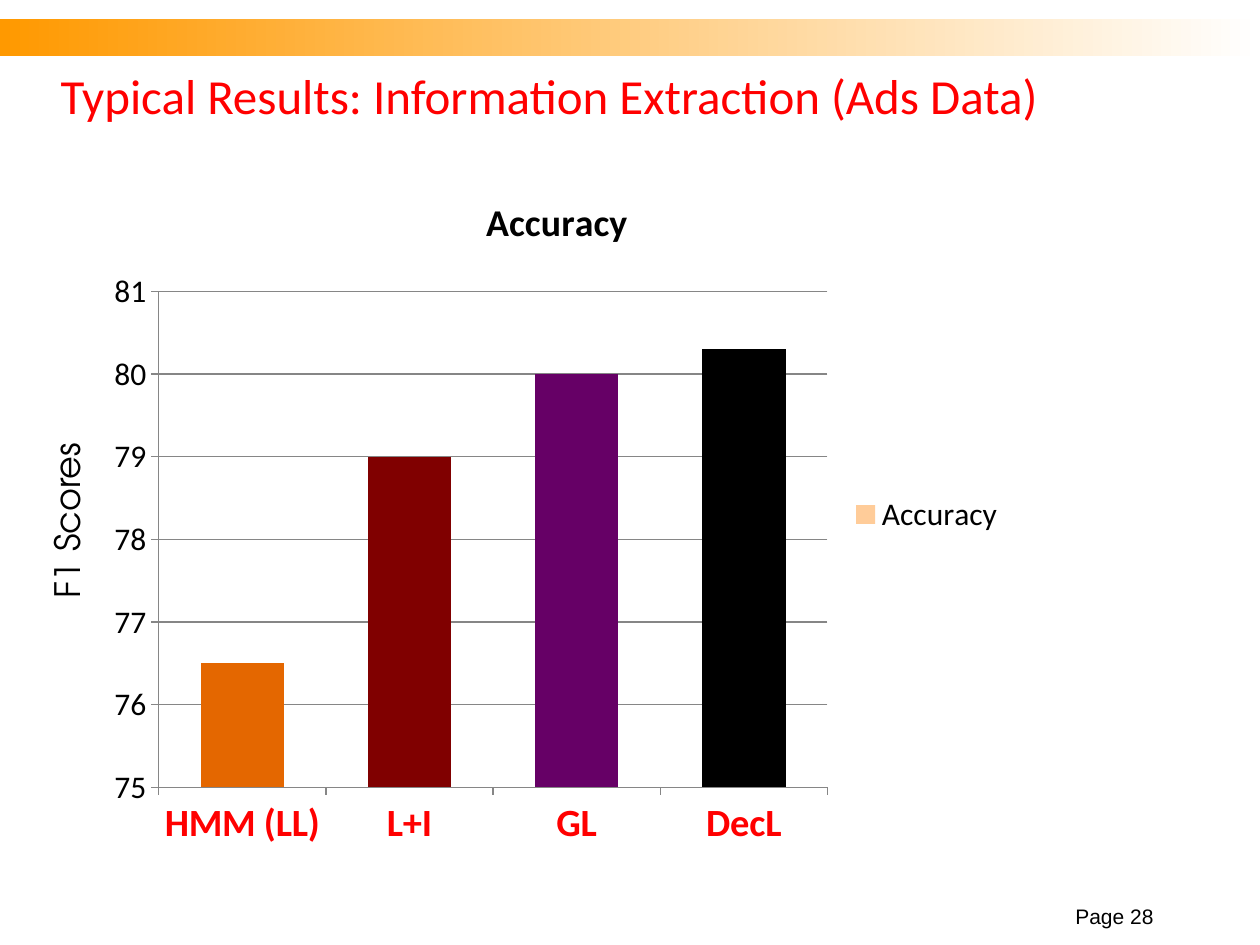
from pptx import Presentation
from pptx.chart.data import CategoryChartData
from pptx.dml.color import RGBColor
from pptx.enum.chart import XL_CHART_TYPE as ChartType, XL_LEGEND_POSITION as LegendPos
from pptx.enum.chart import XL_TICK_MARK as Tick
from pptx.enum.shapes import MSO_SHAPE as Shape
from pptx.enum.text import MSO_ANCHOR as Anchor, PP_ALIGN as Align
from pptx.util import Pt

COLORS = {"accent": "FF9900", "white": "FFFFFF", "red": "FF0000", "black": "000000",
          "grid": "868686", "series": "FFCC99", "orange": "E46700",
          "maroon": "800000", "purple": "660066"}
RESULTS = [("HMM (LL)", 76.5, "orange"), ("L+I", 79, "maroon"),
           ("GL", 80, "purple"), ("DecL", 80.3, "black")]


class SlideBuilder:
    """Holds the style and the current slide, and adds each kind of element."""

    scale = 914400 / 126

    def __init__(self, deck, width, height):
        deck.slide_width, deck.slide_height = self.emu(width, height)
        self.slide = deck.slides.add_slide(deck.slide_layouts[5])

    def emu(self, *lengths):
        return [round(length * self.scale) for length in lengths]

    def color(self, name):
        return RGBColor.from_string(COLORS[name])

    def style(self, font, size, color="black", bold=False, face="Calibri"):
        font.name, font.size, font.bold = face, Pt(size), bold
        font.color.rgb = self.color(color)

    def paint(self, fill, color):
        fill.solid()
        fill.fore_color.rgb = self.color(color)

    def band(self, box, start, end):
        band = self.slide.shapes.add_shape(Shape.RECTANGLE, *self.emu(*box))
        band.shadow.inherit = False
        band.line.fill.background()
        band.fill.gradient()
        band.fill.gradient_angle = 0
        for stop, color in zip(band.fill.gradient_stops, (start, end)):
            stop.color.rgb = self.color(color)

    def set_text(self, frame, text, size, color, face, align, anchor):
        frame.word_wrap = True
        frame.vertical_anchor = anchor
        frame.text = text
        line = frame.paragraphs[0]
        line.alignment = align
        self.style(line.runs[0].font, size, color, face=face)

    def title(self, text, box):
        title = self.slide.shapes.title
        title.left, title.top, title.width, title.height = self.emu(*box)
        self.set_text(title.text_frame, text, 28, "red", "Calibri", Align.LEFT, Anchor.MIDDLE)

    def label(self, text, box, size, face, align, anchor=Anchor.TOP, rotation=0):
        label = self.slide.shapes.add_textbox(*self.emu(*box))
        label.rotation = rotation
        self.set_text(label.text_frame, text, size, "black", face, align, anchor)

    def column_chart(self, name, results, box):
        data = CategoryChartData()
        data.categories = [method for method, _, _ in results]
        data.add_series(name, [score for _, score, _ in results])
        chart = self.slide.shapes.add_chart(
            ChartType.COLUMN_CLUSTERED, *self.emu(*box), data).chart
        self.style(chart.font, 18)
        chart.has_title = True
        chart.chart_title.include_in_layout = False
        heading = chart.chart_title.text_frame
        heading.text = name
        self.style(heading.paragraphs[0].runs[0].font, 21.6, bold=True)
        chart.has_legend = True
        chart.legend.position = LegendPos.RIGHT
        chart.legend.include_in_layout = False
        self.axes(chart)
        plot = chart.plots[0]
        plot.gap_width, plot.overlap = 100, 50
        plot.vary_by_categories = False
        accuracy = plot.series[0]
        self.paint(accuracy.format.fill, "series")
        for index, (_, _, color) in enumerate(results):
            self.paint(accuracy.points[index].format.fill, color)

    def axes(self, chart):
        methods, scores = chart.category_axis, chart.value_axis
        self.style(methods.tick_labels.font, 22, "red", bold=True)
        scores.minimum_scale, scores.maximum_scale, scores.major_unit = 75, 81, 1
        scores.has_major_gridlines = True
        for axis in (methods, scores):
            axis.major_tick_mark = Tick.OUTSIDE
        for part in (methods, scores, scores.major_gridlines):
            part.format.line.color.rgb = self.color("grid")
            part.format.line.width = Pt(0.75)


def main():
    deck = Presentation()
    page = SlideBuilder(deck, 1260, 945)
    page.band((0, 19, 1260, 37), "accent", "white")
    page.title("Typical Results: Information Extraction (Ads Data)", (48, 38, 1167, 113))
    page.label("F1 Scores", (-316, 493, 766, 55), 20, "TeX Gyre Adventor",
               Align.CENTER, rotation=270)
    page.column_chart("Accuracy", RESULTS, (96, 168, 922, 693))
    page.label("Page 28", (1040, 903, 126, 32), 12, "Arial", Align.RIGHT, Anchor.BOTTOM)
    deck.save("out.pptx")


if __name__ == "__main__":
    main()
